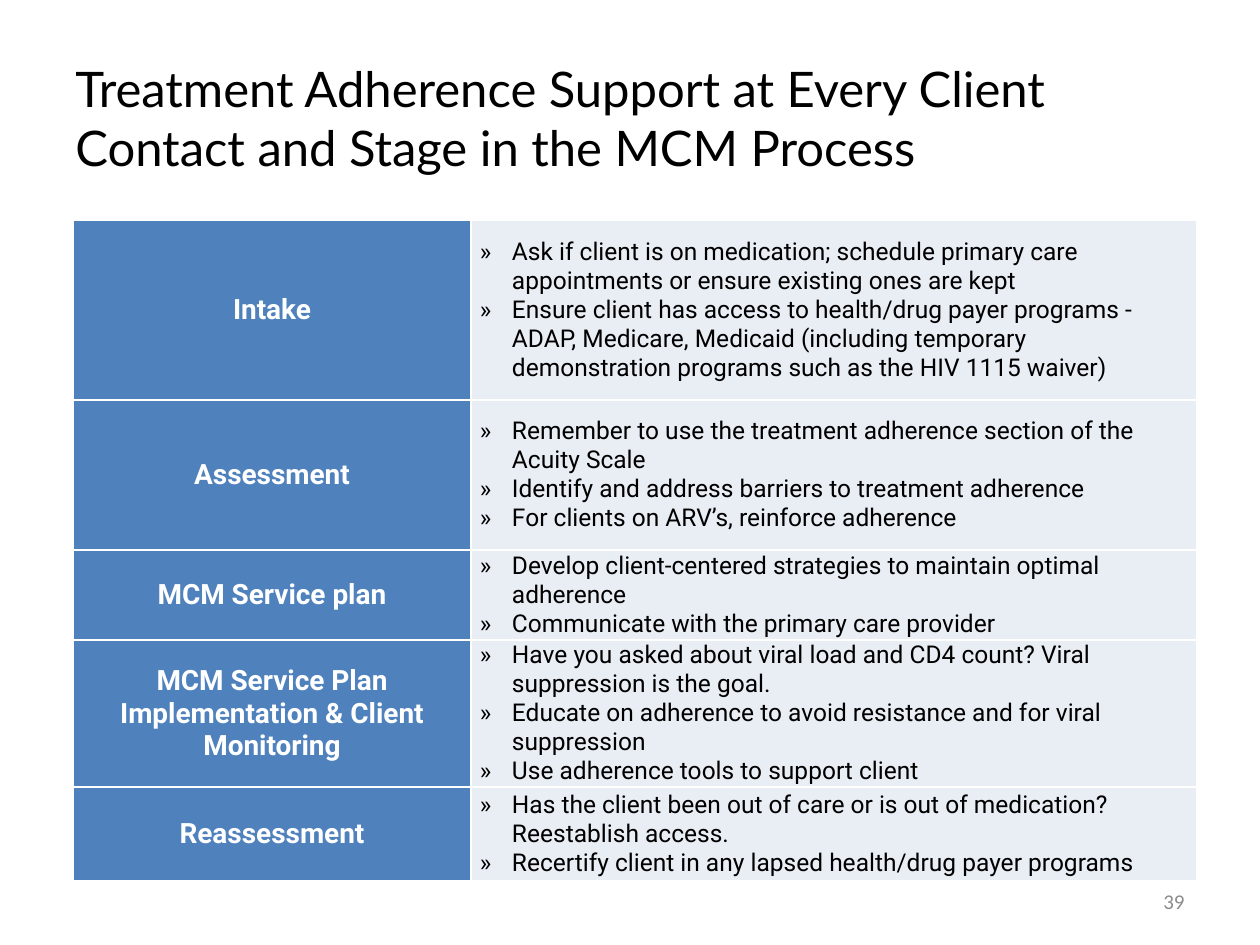
import dataclasses

import lxml.etree
import pptx
import pptx.dml.color
import pptx.enum.text
import pptx.oxml.ns
import pptx.util

EMU_PER_PX = 914400 // 126
ALIGN = pptx.enum.text.PP_ALIGN
MIDDLE = pptx.enum.text.MSO_ANCHOR.MIDDLE


@dataclasses.dataclass(frozen=True)
class TextStyle:
    font: str
    size: int
    color: str
    bold: bool = False


@dataclasses.dataclass(frozen=True)
class Theme:
    title = TextStyle("Lato", 28, "000000")
    stage = TextStyle("Roboto", 16, "FFFFFF", True)
    action = TextStyle("Roboto", 14, "000000")
    page_number = TextStyle("Calibri", 12, "8C8C8C")
    stage_fill = "4F81BD"
    action_fill = "E9EDF4"
    border = "FFFFFF"


THEME = Theme()
TITLE_LINES = [
    "Treatment Adherence Support at Every Client",
    "Contact and Stage in the MCM Process",
]
COLUMN_WIDTHS = [398, 726]
# Row height in px, stage, actions
STAGES = [
    (180, "Intake", [
        "Ask if client is on medication; schedule primary care appointments "
        "or ensure existing ones are kept",
        "Ensure client has access to health/drug payer programs - ADAP, Medicare, "
        "Medicaid (including temporary demonstration programs such as the HIV 1115 waiver)",
    ]),
    (150, "Assessment", [
        "Remember to use the treatment adherence section of the Acuity Scale",
        "Identify and address barriers to treatment adherence",
        "For clients on ARV’s, reinforce adherence",
    ]),
    (90, "MCM Service plan", [
        "Develop client-centered strategies to maintain optimal adherence",
        "Communicate with the primary care provider",
    ]),
    (147, "MCM Service Plan Implementation & Client Monitoring", [
        "Have you asked about viral load and CD4 count? Viral suppression is the goal.",
        "Educate on adherence to avoid resistance and for viral suppression",
        "Use adherence tools to support client",
    ]),
    (94, "Reassessment", [
        "Has the client been out of care or is out of medication? Reestablish access.",
        "Recertify client in any lapsed health/drug payer programs",
    ]),
]


def px(length):
    return pptx.util.Emu(length * EMU_PER_PX)


def rgb(color):
    return pptx.dml.color.RGBColor.from_string(color)


def add_run(paragraph, text, style):
    run = paragraph.add_run()
    run.text = text
    run.font.name = style.font
    run.font.size = pptx.util.Pt(style.size)
    run.font.bold = style.bold
    run.font.color.rgb = rgb(style.color)


def add_child(parent, tag, **attributes):
    return lxml.etree.SubElement(parent, pptx.oxml.ns.qn(tag), **attributes)


def add_text_box(slide, box, lines, style, alignment):
    """Place lines, parted by line breaks, in the middle of the box."""
    frame = slide.shapes.add_textbox(*map(px, box)).text_frame
    frame.word_wrap = True
    frame.vertical_anchor = MIDDLE
    paragraph = frame.paragraphs[0]
    paragraph.alignment = alignment
    for index, line in enumerate(lines):
        if index:
            paragraph.add_line_break()
        add_run(paragraph, line, style)


def add_bullet(paragraph):
    properties = paragraph._p.get_or_add_pPr()
    indent = px(32)
    properties.set("marL", str(indent))
    properties.set("indent", str(-indent))
    add_child(properties, "a:buFont", typeface=THEME.action.font)
    add_child(properties, "a:buChar", char="»")


def format_cell(cell, fill):
    cell.margin_left = cell.margin_right = px(9)
    cell.margin_top = cell.margin_bottom = 0
    cell.vertical_anchor = MIDDLE
    properties = cell._tc.get_or_add_tcPr()
    for side in ("a:lnL", "a:lnR", "a:lnT", "a:lnB"):
        line = add_child(properties, side, w=str(pptx.util.Pt(1)))
        add_child(add_child(line, "a:solidFill"), "a:srgbClr", val=THEME.border)
    cell.fill.solid()
    cell.fill.fore_color.rgb = rgb(fill)


def fill_stage_cell(cell, stage):
    format_cell(cell, THEME.stage_fill)
    paragraph = cell.text_frame.paragraphs[0]
    paragraph.alignment = ALIGN.CENTER
    add_run(paragraph, stage, THEME.stage)


def fill_action_cell(cell, actions):
    format_cell(cell, THEME.action_fill)
    frame = cell.text_frame
    for index, action in enumerate(actions):
        paragraph = frame.add_paragraph() if index else frame.paragraphs[0]
        add_bullet(paragraph)
        add_run(paragraph, action, THEME.action)


def add_stage_table(slide, left, top):
    width = sum(COLUMN_WIDTHS)
    height = sum(row_height for row_height, _, _ in STAGES)
    table = slide.shapes.add_table(
        len(STAGES), len(COLUMN_WIDTHS), *map(px, (left, top, width, height))
    ).table
    table.first_row = table.horz_banding = False
    for column, column_width in zip(table.columns, COLUMN_WIDTHS):
        column.width = px(column_width)
    for index, (row_height, stage, actions) in enumerate(STAGES):
        table.rows[index].height = px(row_height)
        fill_stage_cell(table.cell(index, 0), stage)
        fill_action_cell(table.cell(index, 1), actions)


def add_adherence_slide(presentation):
    slide = presentation.slides.add_slide(presentation.slide_layouts[6])
    add_text_box(slide, (63, 38, 1197, 158), TITLE_LINES, THEME.title, ALIGN.LEFT)
    add_stage_table(slide, 73, 220)
    add_text_box(slide, (903, 876, 294, 50), ["39"], THEME.page_number, ALIGN.RIGHT)


def main():
    presentation = pptx.Presentation()
    presentation.slide_width = px(1260)
    presentation.slide_height = px(945)
    add_adherence_slide(presentation)
    presentation.save("out.pptx")


if __name__ == "__main__":
    main()
